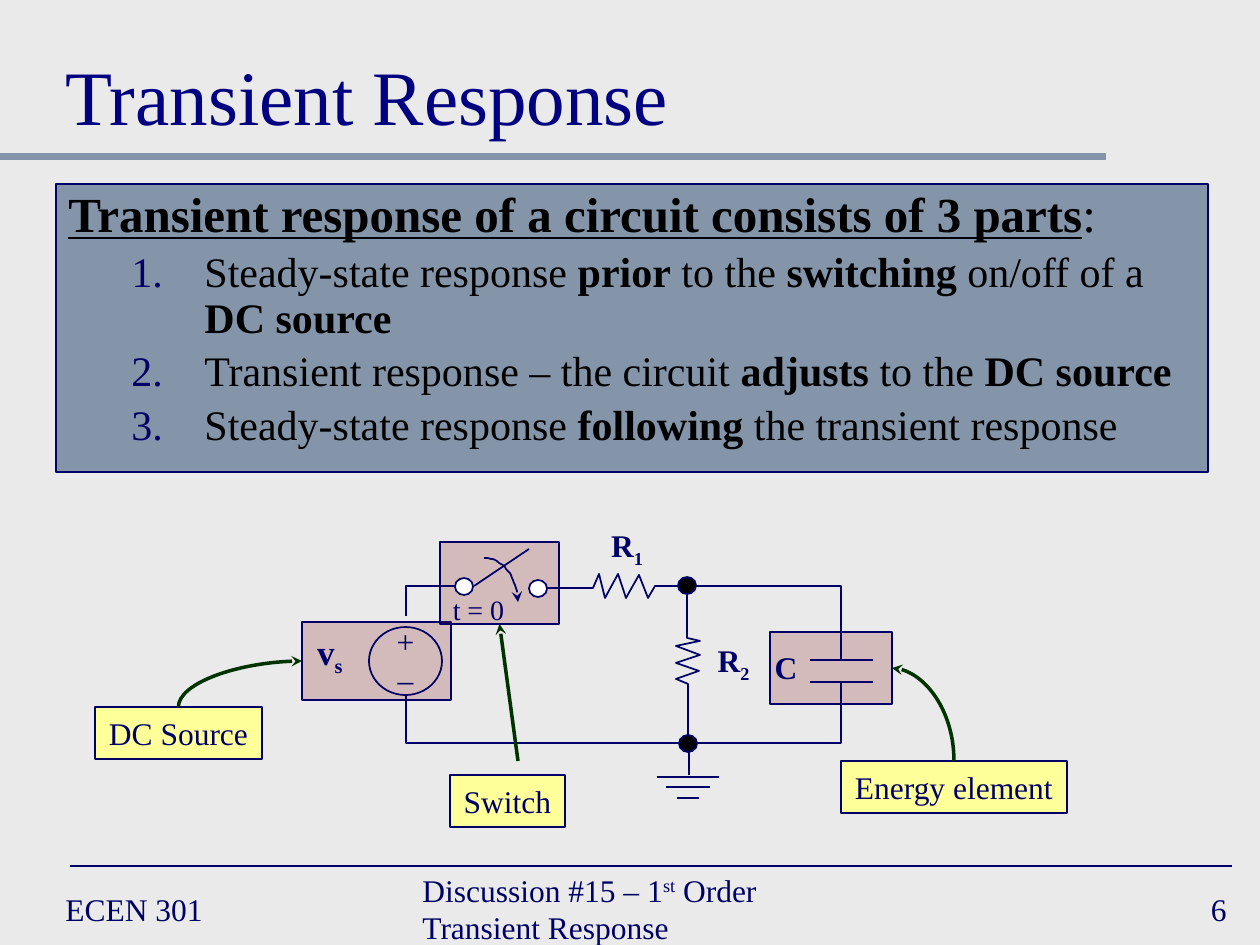
from math import cos, pi, sin

from lxml import etree
from pptx import Presentation
from pptx.dml.color import RGBColor
from pptx.enum.shapes import MSO_CONNECTOR, MSO_SHAPE
from pptx.enum.text import MSO_ANCHOR, MSO_AUTO_SIZE, PP_ALIGN
from pptx.oxml.ns import qn
from pptx.util import Inches, Pt

PX = 914400 / 126
FONT = "Times New Roman"
COLORS = {
    "background": "EAEAEA", "slate": "8495A9", "navy": "000066",
    "title": "000080", "black": "000000", "white": "FFFFFF",
    "maroon": "800000", "yellow": "FFFF99", "green": "003300",
}
TOP, LEFT, BOTTOM, RIGHT = 0, 1, 2, 3
B = {"bold": True}


def px(n):
    return round(n * PX)


def rgb(name):
    return RGBColor.from_string(COLORS[name])


def add_text(p, text, size=18, color="navy", bold=False, underline=False, baseline=0):
    r = p.add_run()
    r.text = text
    f = r.font
    f.name, f.size, f.bold, f.underline = FONT, Pt(size), bold, underline
    f.color.rgb = rgb(color)
    if baseline:
        r._r.get_or_add_rPr().set("baseline", str(baseline * 1000))


def add_box(s, x, y, w, h, runs, align=PP_ALIGN.CENTER, **fmt):
    tf = s.shapes.add_textbox(px(x), px(y), px(w), px(h)).text_frame
    tf.word_wrap = False
    tf.vertical_anchor = MSO_ANCHOR.MIDDLE
    p = tf.paragraphs[0]
    p.alignment = align
    for text, extra in runs:
        add_text(p, text, **fmt, **extra)
    return tf


def style_line(line, color="navy", width=1):
    line.color.rgb = rgb(color)
    line.width = Pt(width)


def add_arrowhead(line, end):
    etree.SubElement(line._get_or_add_ln(), qn(f"a:{end}"), type="stealth")


def add_shape(s, kind, x, y, w, h, fill=None, alpha=None, width=1):
    sp = s.shapes.add_shape(kind, px(x), px(y), px(w), px(h))
    sp.shadow.inherit = False
    style_line(sp.line, width=width)
    if fill is None:
        sp.fill.background()
        return sp
    sp.fill.solid()
    sp.fill.fore_color.rgb = rgb(fill)
    if alpha:
        clr = sp._element.spPr.find(qn("a:solidFill"))[0]
        etree.SubElement(clr, qn("a:alpha"), val=str(alpha * 1000))
    return sp


def add_label(s, x, y, w, text):
    sp = add_shape(s, MSO_SHAPE.RECTANGLE, x, y, w, 52, "yellow")
    tf = sp.text_frame
    tf.word_wrap = False
    tf.vertical_anchor = MSO_ANCHOR.MIDDLE
    p = tf.paragraphs[0]
    p.alignment = PP_ALIGN.CENTER
    add_text(p, text)
    return sp


def add_line(s, start, end, color="navy", width=1, kind=MSO_CONNECTOR.STRAIGHT):
    c = s.shapes.add_connector(kind, *map(px, start + end))
    style_line(c.line, color, width)
    etree.SubElement(c._element.spPr, qn("a:effectLst"))
    return c


def add_curve(s, target, side, label):
    """Curved arrow between the top of a label and one side of a box."""
    c = add_line(s, (0, 0), (1, 1), "green", 2, MSO_CONNECTOR.CURVE)
    c._element.spPr.find(qn("a:prstGeom")).set("prst", "curvedConnector2")
    c.begin_connect(target, side)
    c.end_connect(label, TOP)
    add_arrowhead(c.line, "headEnd")


def add_wire(s, *points):
    fb = s.shapes.build_freeform(*points[0], scale=PX)
    fb.add_line_segments(points[1:], close=False)
    sp = fb.convert_to_shape()
    sp.shadow.inherit = False
    sp.fill.background()
    style_line(sp.line)
    return sp


def add_title(s):
    title = s.shapes.title
    title.left, title.top, title.width, title.height = map(px, (53, 21, 1155, 126))
    tf = title.text_frame
    tf.auto_size = MSO_AUTO_SIZE.NONE
    tf.vertical_anchor = MSO_ANCHOR.BOTTOM
    p = tf.paragraphs[0]
    p.alignment = PP_ALIGN.LEFT
    add_text(p, "Transient Response", size=44, color="title")


def add_numbering(p):
    pPr = p._p.get_or_add_pPr()
    pPr.set("marL", str(Inches(1.08)))
    pPr.set("indent", str(Inches(-0.58)))
    clr = etree.SubElement(pPr, qn("a:buClr"))
    etree.SubElement(clr, qn("a:srgbClr"), val=COLORS["navy"])
    etree.SubElement(pPr, qn("a:buFont"), typeface=FONT)
    etree.SubElement(pPr, qn("a:buAutoNum"), type="arabicPeriod")


def add_body(s):
    sp = add_shape(s, MSO_SHAPE.RECTANGLE, 56, 184, 1152, 288, "slate", width=0.75)
    tf = sp.text_frame
    tf.word_wrap = True
    tf.vertical_anchor = MSO_ANCHOR.TOP
    p = tf.paragraphs[0]
    p.alignment, p.line_spacing = PP_ALIGN.LEFT, 0.9
    add_text(p, "Transient response of a circuit consists of 3 parts",
             size=28, color="black", bold=True, underline=True)
    add_text(p, ":", size=28, color="black")
    parts = [
        [("Steady-state response ", {}), ("prior", B), (" to the ", {}),
         ("switching", B), (" on/off of a ", {}), ("DC source", B)],
        [("Transient response – the circuit ", {}), ("adjusts", B),
         (" to the ", {}), ("DC source", B)],
        [("Steady-state response ", {}), ("following", B),
         (" the transient response", {})],
    ]
    for runs in parts:
        p = tf.add_paragraph()
        add_numbering(p)
        p.alignment, p.line_spacing, p.space_before = PP_ALIGN.LEFT, 0.9, Pt(4.8)
        for text, extra in runs:
            add_text(p, text, size=24, color="black", **extra)


def add_circuit(s):
    # Wires and resistors
    add_wire(s, (679, 743), (406, 743), (406, 695))
    add_wire(s, (406, 616), (406, 586), (455, 586))
    add_wire(s, (696, 586), (841, 586), (841, 660))
    add_wire(s, (697, 743), (841, 743), (841, 682))
    add_wire(s, (547, 588), (593, 588), (599, 574), (605, 598), (618, 574), (626, 598),
             (639, 575), (648, 598), (655, 586), (678, 586))
    add_wire(s, (687, 595), (687, 638), (700, 641), (676, 646), (700, 655), (676, 663),
             (699, 671), (676, 679), (688, 684), (688, 735))
    # Ground and capacitor plates
    add_line(s, (689, 743), (689, 775))
    for y, half in ((777, 31), (787, 22), (798, 11)):
        add_line(s, (688 - half, y), (688 + half, y))
    for y in (660, 682):
        add_line(s, (810, y), (873, y))
    # Source, nodes and switch
    add_shape(s, MSO_SHAPE.OVAL, 369, 627, 73, 68)
    for x, y, fill in ((678, 577, "black"), (679, 735, "black"),
                       (455, 578, "white"), (529, 580, "white")):
        add_shape(s, MSO_SHAPE.OVAL, x, y, 18, 17, fill)
    add_line(s, (474, 586), (529, 549))
    angles = [i * pi / 48 for i in range(25)]
    arc = add_wire(s, *[(484 + 34 * sin(a), 602 - 44 * cos(a)) for a in angles])
    add_arrowhead(arc.line, "tailEnd")
    # Component names
    add_box(s, 594, 523, 66, 50, [("R", {}), ("1", {"baseline": -25})], bold=True)
    add_box(s, 704, 638, 59, 50, [("R", {}), ("2", {"baseline": -25})], bold=True)
    add_box(s, 762, 642, 48, 50, [("C", {})], bold=True)
    add_box(s, 304, 629, 52, 50, [("v", {}), ("s", {"baseline": -25})],
            size=20, bold=True)
    add_box(s, 440, 586, 77, 47, [("t = 0", {})], size=16)
    p = add_box(s, 384, 616, 43, 88, [("+", {})]).add_paragraph()
    p.alignment = PP_ALIGN.CENTER
    add_text(p, "–")


def add_footer(s):
    add_box(s, 53, 882, 273, 53, [("ECEN 301", {})], PP_ALIGN.LEFT)
    add_box(s, 410, 882, 483, 53,
            [("Discussion #15 – 1", {}), ("st", {"baseline": 30}),
             (" Order Transient Response", {})], PP_ALIGN.LEFT)
    add_box(s, 977, 882, 262, 53, [("6", {})], PP_ALIGN.RIGHT)


def main():
    prs = Presentation()
    prs.slide_width, prs.slide_height = px(1260), px(945)
    s = prs.slides.add_slide(prs.slide_layouts[5])
    s.background.fill.solid()
    s.background.fill.fore_color.rgb = rgb("background")

    # Rules, title, text and footer
    add_line(s, (0, 157), (1106, 157), "slate", 4)
    add_line(s, (70, 866), (1232, 866))
    add_title(s)
    add_body(s)
    add_footer(s)

    # Highlighted parts behind the circuit
    energy, source, switch = [
        add_shape(s, MSO_SHAPE.RECTANGLE, *at, "maroon", alpha=20)
        for at in ((770, 632, 122, 72), (302, 622, 149, 78), (440, 542, 119, 82))]
    add_circuit(s)

    # Labels and their arrows
    source_label = add_label(s, 95, 707, 167, "DC Source")
    add_label(s, 450, 775, 115, "Switch")
    energy_label = add_label(s, 841, 761, 226, "Energy element")
    add_curve(s, source, LEFT, source_label)
    add_curve(s, energy, RIGHT, energy_label)
    arrow = add_line(s, (518, 761), (500, 624), "green", 2)
    arrow.end_connect(switch, BOTTOM)
    add_arrowhead(arrow.line, "tailEnd")

    prs.save("out.pptx")


if __name__ == "__main__":
    main()
